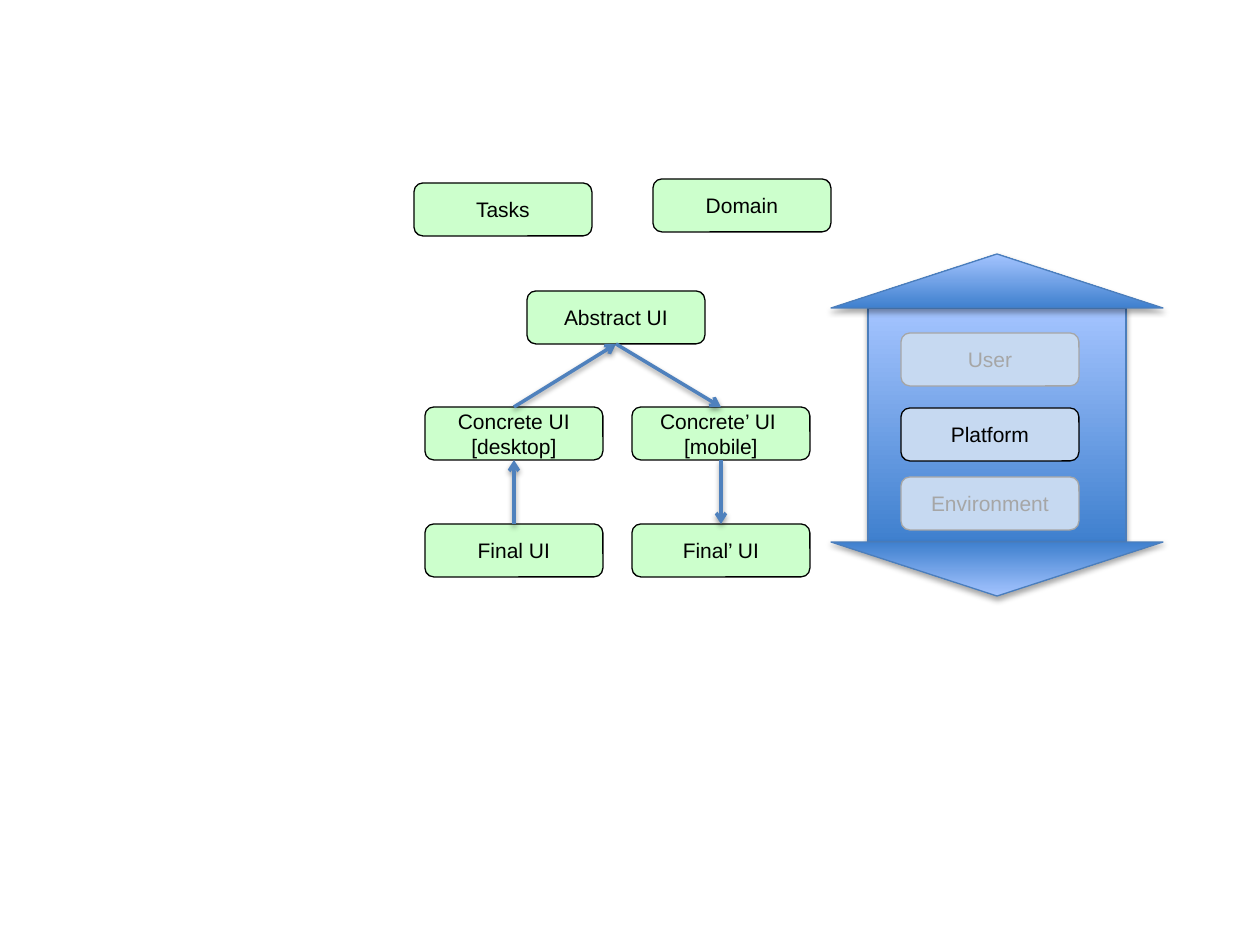
from typing import Any, NamedTuple

from lxml import etree
from pptx import Presentation, util as u
from pptx.dml.color import RGBColor
from pptx.enum import shapes as kinds, text as txt
from pptx.oxml.ns import qn

SCALE = 914400 / 126
COLORS = {
    "green": "CCFFCC",
    "pale": "C6D9F1",
    "black": "000000",
    "gray": "A6A6A6",
    "deep": "3F80CE",
    "light": "A4C4FF",
    "edge": "4B7EBC",
    "link": "4F81BD",
}
WIDTH, HEIGHT = 178, 53
TOP, BOTTOM = 0, 2


class Box(NamedTuple):
    label: str
    left: int
    top: int
    fill: str = "green"
    ink: str = "black"


class Part(NamedTuple):
    kind: Any
    left: int
    top: int
    width: int
    height: int
    turn: int = 0


class Link(NamedTuple):
    start: str
    out: int
    end: str
    into: int


BOXES = [
    Box("Tasks", 414, 183),
    Box("Domain", 653, 179),
    Box("Abstract UI", 527, 291),
    Box("Concrete UI\n[desktop]", 425, 407),
    Box("Concrete’ UI \n[mobile]", 632, 407),
    Box("Final UI", 425, 524),
    Box("Final’ UI", 632, 524),
    Box("User", 901, 333, "pale", "gray"),
    Box("Platform", 901, 408, "pale"),
    Box("Environment", 901, 477, "pale", "gray"),
]
SHAPE = kinds.MSO_SHAPE
TOWER = [
    Part(SHAPE.RECTANGLE, 868, 308, 258, 234),
    Part(SHAPE.ISOSCELES_TRIANGLE, 831, 254, 332, 54),
    Part(SHAPE.ISOSCELES_TRIANGLE, 831, 542, 332, 54, 180),
]
LINKS = [
    Link("Final UI", TOP, "Concrete UI\n[desktop]", BOTTOM),
    Link("Concrete UI\n[desktop]", TOP, "Abstract UI", BOTTOM),
    Link("Abstract UI", BOTTOM, "Concrete’ UI \n[mobile]", TOP),
    Link("Concrete’ UI \n[mobile]", BOTTOM, "Final’ UI", TOP),
]


def px(size: int) -> int:
    return round(size * SCALE)


def color(name: str) -> RGBColor:
    return RGBColor.from_string(COLORS[name])


def add_shadow(item: Any, drop: int, alpha: int) -> None:
    effects = etree.SubElement(item._element.spPr, qn("a:effectLst"))
    outer = etree.SubElement(
        effects, qn("a:outerShdw"), blurRad="40000", dist=str(drop),
        dir="5400000", rotWithShape="0")
    tone = etree.SubElement(outer, qn("a:srgbClr"), val=COLORS["black"])
    etree.SubElement(tone, qn("a:alpha"), val=str(alpha * 1000))


def draw_part(slide: Any, part: Part) -> None:
    shape = slide.shapes.add_shape(
        part.kind, *map(px, (part.left, part.top, part.width, part.height)))
    shape.rotation = part.turn
    shape.fill.gradient()
    shape.fill.gradient_angle = 90
    for stop, name, place in zip(
            shape.fill.gradient_stops, ("deep", "light"), (0, 1)):
        stop.color.rgb = color(name)
        stop.position = place
    shape.line.color.rgb = color("edge")
    shape.line.width = u.Pt(0.75)
    add_shadow(shape, 23000, 35)


def draw_box(slide: Any, box: Box) -> Any:
    shape = slide.shapes.add_shape(
        SHAPE.ROUNDED_RECTANGLE, *map(px, (box.left, box.top, WIDTH, HEIGHT)))
    shape.shadow.inherit = False
    shape.fill.solid()
    shape.fill.fore_color.rgb = color(box.fill)
    shape.line.color.rgb = color(box.ink)
    shape.line.width = u.Pt(0.75)
    frame = shape.text_frame
    frame.text = box.label
    frame.word_wrap = False
    frame.vertical_anchor = txt.MSO_ANCHOR.MIDDLE
    for para in frame.paragraphs:
        para.alignment = txt.PP_ALIGN.CENTER
        for run in para.runs:
            run.font.name = "Arial"
            run.font.size = u.Pt(12)
            run.font.color.rgb = color(box.ink)
    return shape


def draw_link(slide: Any, link: Link, nodes: dict[str, Any]) -> None:
    line = slide.shapes.add_connector(
        kinds.MSO_CONNECTOR.STRAIGHT, 0, 0, 0, 0)
    line.begin_connect(nodes[link.start], link.out)
    line.end_connect(nodes[link.end], link.into)
    line.line.color.rgb = color("link")
    line.line.width = u.Pt(2)
    stroke = line._element.spPr.find(qn("a:ln"))
    etree.SubElement(stroke, qn("a:tailEnd"), type="arrow")
    add_shadow(line, 20000, 38)


def main() -> None:
    deck = Presentation()
    deck.slide_width, deck.slide_height = px(1260), px(945)
    slide = deck.slides.add_slide(deck.slide_layouts[6])
    for part in TOWER:
        draw_part(slide, part)
    nodes = {box.label: draw_box(slide, box) for box in BOXES}
    for link in LINKS:
        draw_link(slide, link, nodes)
    deck.save("out.pptx")


if __name__ == "__main__":
    main()
